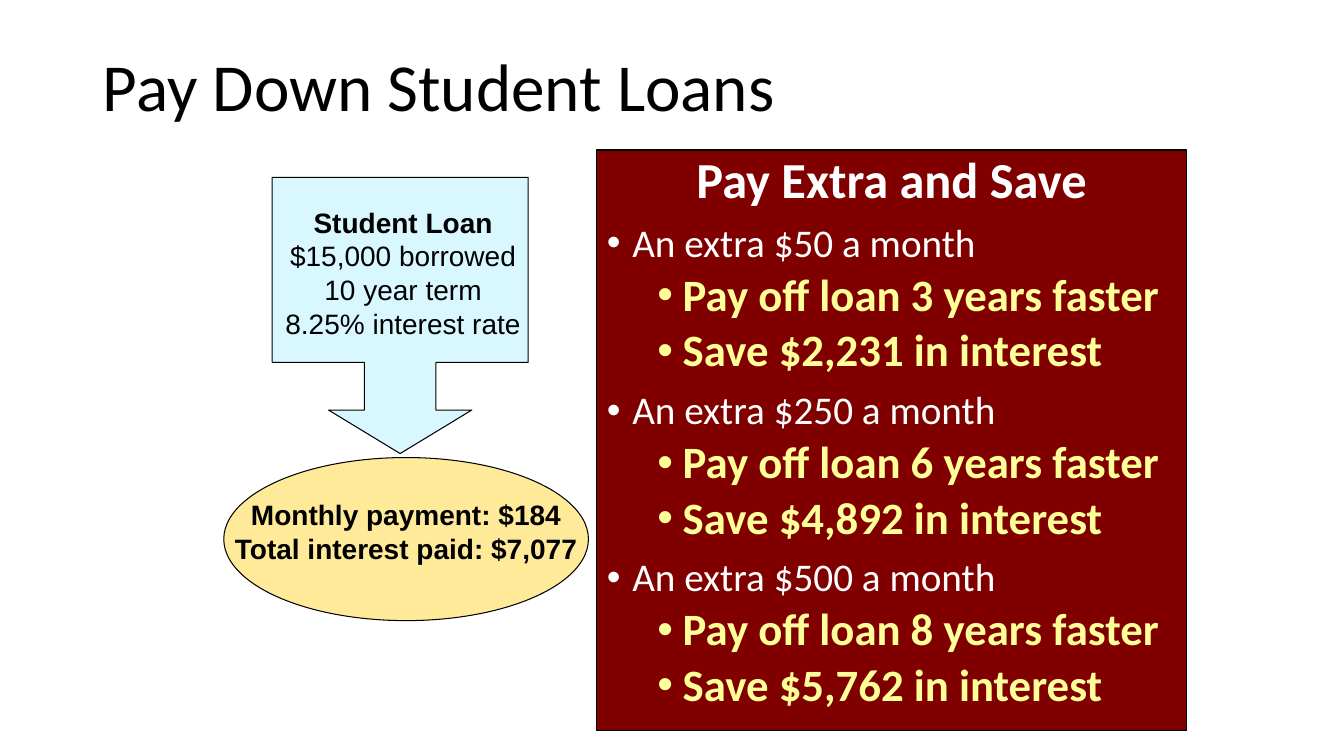
from lxml.etree import SubElement
from pptx import Presentation
from pptx.dml.color import RGBColor
from pptx.enum.shapes import MSO_SHAPE
from pptx.enum.text import MSO_ANCHOR, MSO_AUTO_SIZE, PP_ALIGN
from pptx.oxml.ns import qn
from pptx.util import Cm, Pt

BLACK = RGBColor(0x00, 0x00, 0x00)
WHITE = RGBColor(0xFF, 0xFF, 0xFF)
MAROON = RGBColor(0x80, 0x00, 0x00)
PALE_YELLOW = RGBColor(0xFF, 0xFF, 0x99)
GOLD = RGBColor(0xFF, 0xCC, 0x00)
SKY = RGBColor(0x00, 0xCC, 0xFF)

TITLE = "Pay Down Student Loans"
PANEL_HEADING = "Pay Extra and Save"
# extra dollars a month, years saved, interest saved
SAVINGS = [("$50", 3, "$2,231"), ("$250", 6, "$4,892"), ("$500", 8, "$5,762")]
# text, bold
LOAN_TERMS = [
    ("Student Loan", True),
    ("$15,000 borrowed", False),
    ("10 year term", False),
    ("8.25% interest rate", False),
]
LOAN_COST = [("Monthly payment: $184", True), ("Total interest paid: $7,077", True)]

# left, top, width, height in centimetres
TITLE_AREA = (2.34, 0.41, 29.21, 3.68)
PANEL_AREA = (15.04, 3.78, 14.86, 14.63)
CALLOUT_AREA = (6.86, 4.47, 6.45, 6.96)
ELLIPSE_AREA = (5.64, 11.53, 9.19, 4.11)
TERMS_AREA = (6.35, 5.05, 7.62, 3.68)
COST_AREA = (5.64, 12.42, 9.19, 1.96)
HANGING = Cm(0.64)


def place(shape, area):
    shape.left, shape.top, shape.width, shape.height = map(Cm, area)


def style(para, font_name, size, color, bold):
    for span in para.runs:
        font = span.font
        font.name, font.size, font.bold = font_name, Pt(size), bold
        font.color.rgb = color


def outline(shape):
    shape.line.color.rgb = BLACK
    shape.line.width = Pt(0.75)


def add_tinted_shape(page, kind, area, color, opacity):
    """Add an outlined shape whose fill has the given opacity in percent."""
    shape = page.shapes.add_shape(kind, *map(Cm, area))
    shape.shadow.inherit = False
    shape.fill.solid()
    shape.fill.fore_color.rgb = color
    tint = shape.fill._xPr.find(qn("a:solidFill"))[0]
    SubElement(tint, qn("a:alpha"), val=str(opacity * 1000))
    outline(shape)
    return shape


def add_caption(page, area, lines, wrap):
    frame = page.shapes.add_textbox(*map(Cm, area)).text_frame
    frame.word_wrap = wrap
    frame.auto_size = MSO_AUTO_SIZE.SHAPE_TO_FIT_TEXT
    frame.text = "\n".join(text for text, _ in lines)
    for para, (_, bold) in zip(frame.paragraphs, lines):
        para.alignment = PP_ALIGN.CENTER
        style(para, "Arial", 20, BLACK, bold)


def set_bullet(para, margin, bulleted):
    properties = para._p.get_or_add_pPr()
    properties.set("marL", str(margin))
    properties.set("indent", str(-HANGING))
    if bulleted:
        SubElement(properties, qn("a:buFont"), typeface="Arial")
        SubElement(properties, qn("a:buChar"), char="•")
    else:
        SubElement(properties, qn("a:buNone"))


def fill_title(title):
    place(title, TITLE_AREA)
    frame = title.text_frame
    frame.text = TITLE
    frame.vertical_anchor = MSO_ANCHOR.MIDDLE
    frame.auto_size = MSO_AUTO_SIZE.NONE
    para = frame.paragraphs[0]
    para.alignment = PP_ALIGN.LEFT
    para.line_spacing = 0.9
    style(para, "Calibri", 48, BLACK, False)


def fill_panel(panel):
    place(panel, PANEL_AREA)
    panel.fill.solid()
    panel.fill.fore_color.rgb = MAROON
    outline(panel)

    lines = [(PANEL_HEADING, 0)]
    for extra, years, interest in SAVINGS:
        lines += [
            (f"An extra {extra} a month", 0),
            (f"Pay off loan {years} years faster", 1),
            (f"Save {interest} in interest", 1),
        ]
    frame = panel.text_frame
    frame.auto_size = MSO_AUTO_SIZE.NONE
    frame.text = "\n".join(text for text, _ in lines)
    for number, (para, (_, level)) in enumerate(zip(frame.paragraphs, lines)):
        heading = number == 0
        para.level = level
        para.alignment = PP_ALIGN.CENTER if heading else PP_ALIGN.LEFT
        para.line_spacing = 0.9
        para.space_before = Pt(5 if level else 10)
        set_bullet(para, HANGING + level * Cm(1.27), not heading)
        if heading:
            style(para, "Calibri", 36, WHITE, True)
        elif level:
            style(para, "Calibri", 32, PALE_YELLOW, True)
        else:
            style(para, "Calibri", 28, WHITE, False)


def main():
    deck = Presentation()
    deck.slide_width, deck.slide_height = Cm(33.87), Cm(19.05)
    page = deck.slides.add_slide(deck.slide_layouts[1])
    fill_title(page.shapes.title)
    fill_panel(page.placeholders[1])

    add_tinted_shape(page, MSO_SHAPE.OVAL, ELLIPSE_AREA, GOLD, 40)
    callout = add_tinted_shape(page, MSO_SHAPE.DOWN_ARROW_CALLOUT, CALLOUT_AREA, SKY, 15)
    for index, value in enumerate((0.28, 0.28, 0.17, 0.67)):
        callout.adjustments[index] = value
    add_caption(page, TERMS_AREA, LOAN_TERMS, True)
    add_caption(page, COST_AREA, LOAN_COST, False)
    deck.save("out.pptx")


if __name__ == "__main__":
    main()
